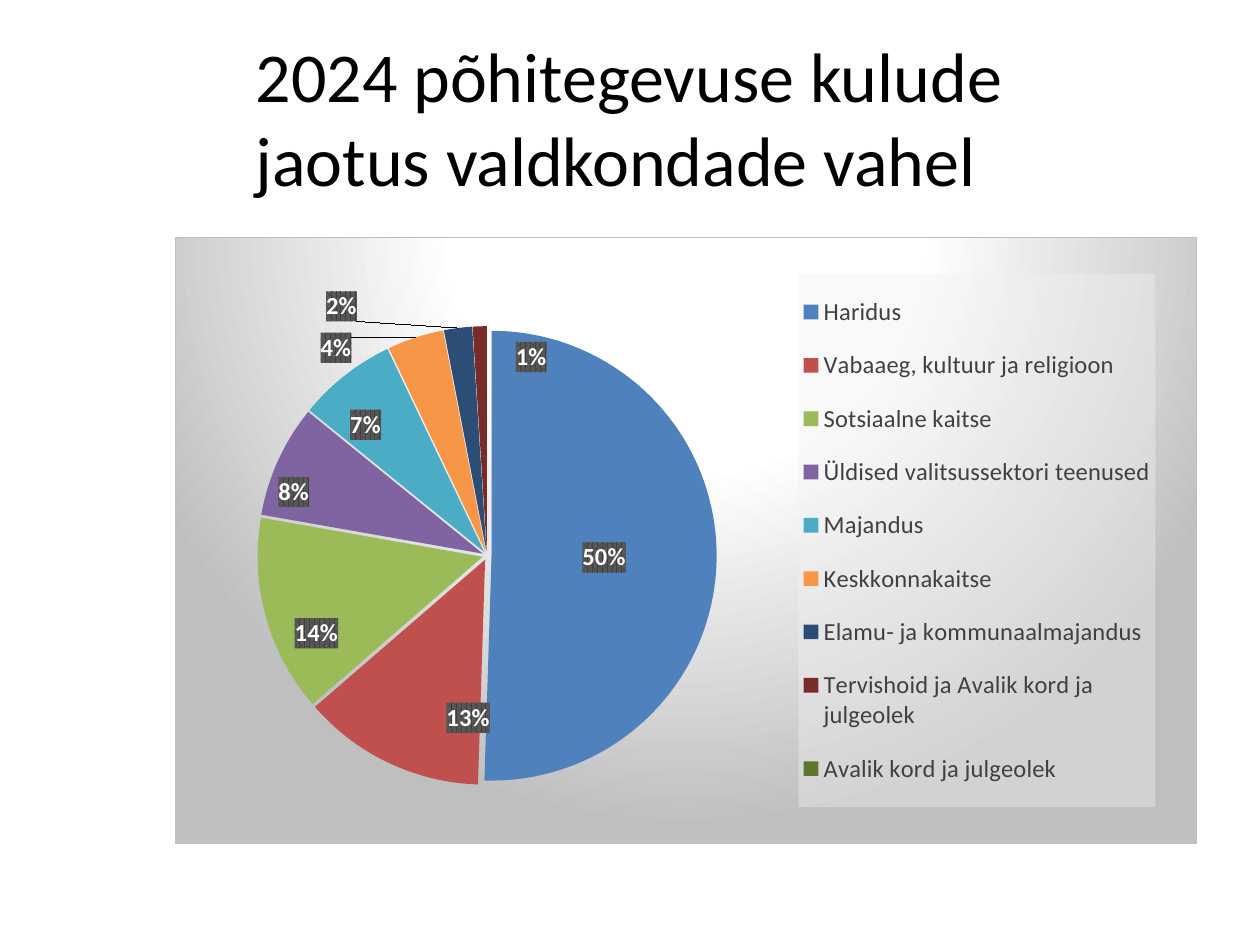
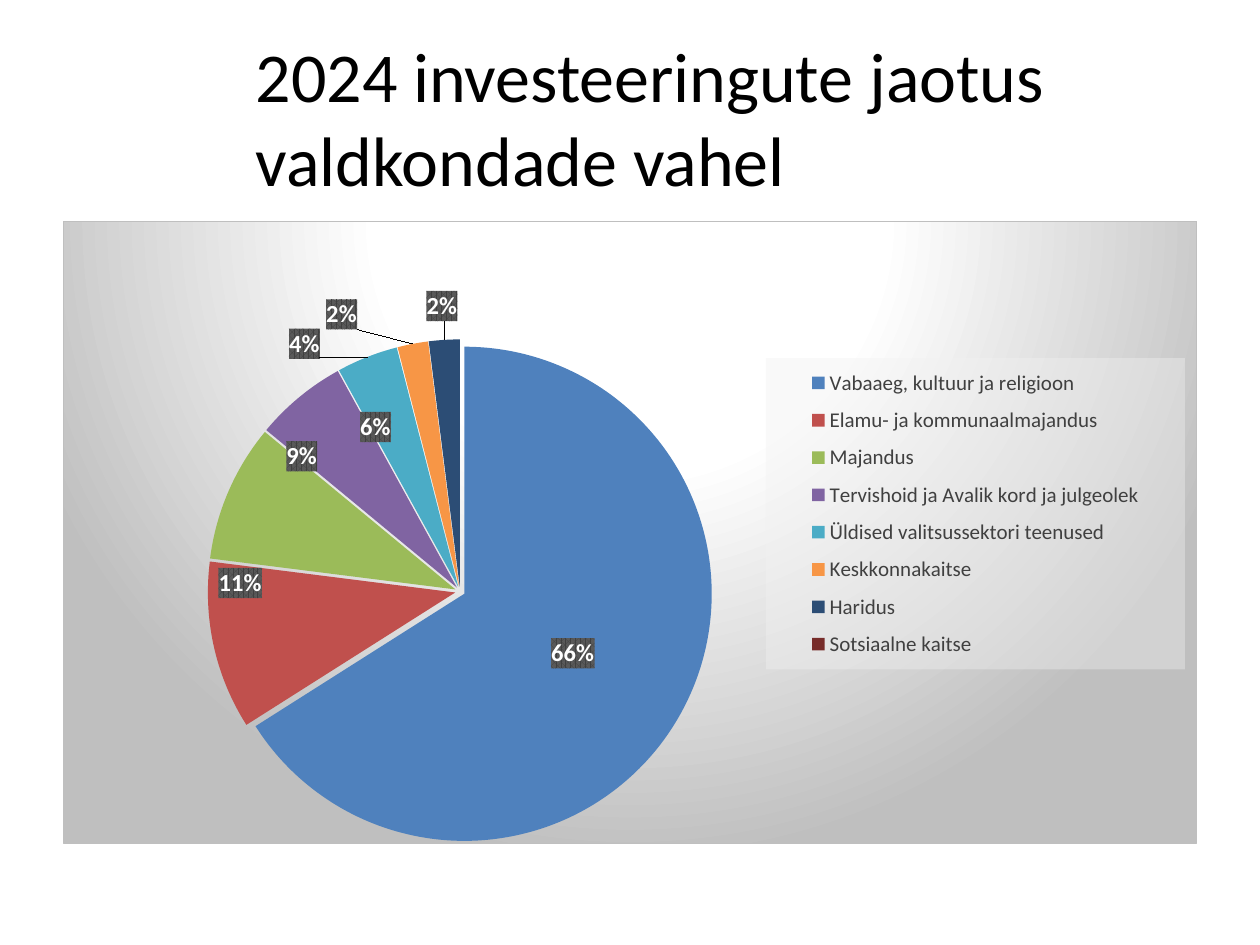
import copy
from dataclasses import dataclass

import pptx
import pptx.chart.chart
import pptx.chart.data
import pptx.chart.series
import pptx.dml.color
import pptx.enum.chart
import pptx.enum.text
import pptx.oxml
import pptx.oxml.ns
import pptx.presentation
import pptx.util
from pptx.dml.color import RGBColor
from pptx.util import Inches

FONT = "Calibri"
BLACK = RGBColor(0x00, 0x00, 0x00)
WHITE = RGBColor(0xFF, 0xFF, 0xFF)
LEGEND_TEXT = RGBColor(0x40, 0x40, 0x40)
LEGEND_FILL = RGBColor(0xF2, 0xF2, 0xF2)
EDGE_GREY = RGBColor(0xBF, 0xBF, 0xBF)
LABEL_DARK = RGBColor(0x40, 0x40, 0x40)
LABEL_LIGHT = RGBColor(0x59, 0x59, 0x59)
SLICE_COLORS = [
    RGBColor(0x4F, 0x81, 0xBD),
    RGBColor(0xC0, 0x50, 0x4D),
    RGBColor(0x9B, 0xBB, 0x59),
    RGBColor(0x80, 0x64, 0xA2),
    RGBColor(0x4B, 0xAC, 0xC6),
    RGBColor(0xF7, 0x96, 0x46),
    RGBColor(0x2C, 0x4D, 0x75),
    RGBColor(0x77, 0x2C, 0x2A),
    RGBColor(0x5F, 0x75, 0x30),
]
NAMESPACES = pptx.oxml.ns.nsdecls("c", "a")
qn = pptx.oxml.ns.qn


@dataclass
class Box:
    left: float
    top: float
    width: float
    height: float


@dataclass
class Slice:
    """A pie slice; label_shift is in inches from the slice's middle."""

    category: str
    percent: int | None
    label_shift: tuple[float, float] | None = None


@dataclass
class PieSlide:
    """Frame is in inches; plot and legend are fractions of the frame."""

    title: str
    frame: Box
    plot: Box
    legend: Box
    font_size: int
    legend_size: int
    slices: list[Slice]


PIE_SLIDES = [
    PieSlide(
        "2024 põhitegevuse kulude jaotus valdkondade vahel",
        frame=Box(1.39, 1.88, 8.11, 4.82),
        plot=Box(0.08, 0.09, 0.45, 0.87),
        legend=Box(0.61, 0.06, 0.35, 0.88),
        font_size=14,
        legend_size=14,
        slices=[
            Slice("Haridus", 50),
            Slice("Vabaaeg, kultuur ja religioon", 13, (0.25, 0.45)),
            Slice("Sotsiaalne kaitse", 14, (-0.46, 0.37)),
            Slice("Üldised valitsussektori teenused", 8, (-0.69, -0.12)),
            Slice("Majandus", 7, (-0.39, -0.31)),
            Slice("Keskkonnakaitse", 4, (-0.91, -0.77)),
            Slice("Elamu- ja kommunaalmajandus", 2, (-1.04, -1.06)),
            Slice("Tervishoid ja Avalik kord ja julgeolek", 1, (0.38, -0.65)),
            Slice("Avalik kord ja julgeolek", None),
        ],
    ),
    PieSlide(
        "2024 investeeringute jaotus valdkondade vahel",
        frame=Box(0.5, 1.75, 9, 4.95),
        plot=Box(0.1, 0.22, 0.5, 0.81),
        legend=Box(0.62, 0.22, 0.37, 0.5),
        font_size=10,
        legend_size=12,
        slices=[
            Slice("Vabaaeg, kultuur ja religioon", 66),
            Slice("Elamu- ja kommunaalmajandus", 11, (-0.75, -0.29)),
            Slice("Majandus", 9, (-0.32, -0.67)),
            Slice("Tervishoid ja Avalik kord ja julgeolek", 6, (-0.02, -0.52)),
            Slice("Üldised valitsussektori teenused", 4, (-0.86, -1.02)),
            Slice("Keskkonnakaitse", 2, (-0.75, -1.2)),
            Slice("Haridus", 2, (-0.08, -1.25)),
            Slice("Sotsiaalne kaitse", None),
        ],
    ),
]


def style_font(font, size: int, color: RGBColor, bold: bool = False) -> None:
    font.name = FONT
    font.size = pptx.util.Pt(size)
    font.bold = bold
    font.color.rgb = color


def chart_xml(tag: str, content: str = "", attributes: str = ""):
    return pptx.oxml.parse_xml(f"<c:{tag} {NAMESPACES} {attributes}>{content}</c:{tag}>")


def solid(color: RGBColor, extra: str = "") -> str:
    return f'<a:solidFill><a:srgbClr val="{color}">{extra}</a:srgbClr></a:solidFill>'


def layout_xml(box: Box, target: str = ""):
    return chart_xml(
        "layout",
        f'<c:manualLayout>{target}<c:xMode val="edge"/><c:yMode val="edge"/>'
        f'<c:x val="{box.left}"/><c:y val="{box.top}"/>'
        f'<c:w val="{box.width}"/><c:h val="{box.height}"/></c:manualLayout>',
    )


def replace_layout(parent, layout, position: int) -> None:
    for old_layout in parent.findall(qn("c:layout")):
        parent.remove(old_layout)
    parent.insert(position, layout)


def style_background(chart: pptx.chart.chart.Chart) -> None:
    stops = "".join(
        f'<a:gs pos="{position * 1000}"><a:srgbClr val="{color}"/></a:gs>'
        for position, color in [(0, WHITE), (39, WHITE), (100, EDGE_GREY)]
    )
    background = chart_xml(
        "spPr",
        f'<a:gradFill><a:gsLst>{stops}</a:gsLst><a:path path="circle">'
        '<a:fillToRect l="50000" t="-80000" r="50000" b="180000"/></a:path></a:gradFill>'
        f'<a:ln w="9525">{solid(EDGE_GREY)}</a:ln>',
    )
    chart_space = chart.element
    chart_space.find(qn("c:chart")).addnext(background)


def style_legend(chart: pptx.chart.chart.Chart, pie: PieSlide) -> None:
    chart.has_legend = True
    legend = chart.legend
    legend.position = pptx.enum.chart.XL_LEGEND_POSITION.RIGHT
    legend.include_in_layout = False
    style_font(legend.font, pie.legend_size, LEGEND_TEXT)
    element = chart.element.find(".//" + qn("c:legend"))
    replace_layout(element, layout_xml(pie.legend), 1)
    fill = chart_xml("spPr", solid(LEGEND_FILL, '<a:alpha val="39000"/>'))
    element.find(qn("c:overlay")).addnext(fill)


def add_slice_labels(series: pptx.chart.series.PieSeries, pie: PieSlide) -> None:
    labels = series.data_labels
    labels.show_value = True
    labels.number_format = '0"%"'
    labels.number_format_is_linked = False
    labels.position = pptx.enum.chart.XL_LABEL_POSITION.CENTER
    style_font(labels.font, 14, WHITE, bold=True)
    element = series._element.find(qn("c:dLbls"))
    element.find(qn("c:numFmt")).addnext(
        chart_xml(
            "spPr",
            f'<a:pattFill prst="pct75"><a:fgClr><a:srgbClr val="{LABEL_DARK}"/></a:fgClr>'
            f'<a:bgClr><a:srgbClr val="{LABEL_LIGHT}"/></a:bgClr></a:pattFill>',
        )
    )
    shared = [child for child in element if child.tag != qn("c:showLeaderLines")]
    for index, pie_slice in enumerate(pie.slices):
        if pie_slice.label_shift is None:
            continue
        shift_x, shift_y = pie_slice.label_shift
        label = chart_xml(
            "dLbl",
            f'<c:idx val="{index}"/><c:layout><c:manualLayout>'
            f'<c:x val="{shift_x / pie.frame.width:.4f}"/>'
            f'<c:y val="{shift_y / pie.frame.height:.4f}"/>'
            "</c:manualLayout></c:layout>",
        )
        label.extend(copy.deepcopy(shared))
        label.find(qn("c:numFmt")).set("formatCode", "0%")
        label.find(qn("c:showVal")).set("val", "0")
        label.find(qn("c:showPercent")).set("val", "1")
        shared[0].addprevious(label)


def add_pie(slide, pie: PieSlide) -> None:
    data = pptx.chart.data.CategoryChartData()
    data.categories = [pie_slice.category for pie_slice in pie.slices]
    data.add_series("Series 1", [pie_slice.percent for pie_slice in pie.slices])
    frame = pie.frame
    chart = slide.shapes.add_chart(
        pptx.enum.chart.XL_CHART_TYPE.PIE,
        Inches(frame.left),
        Inches(frame.top),
        Inches(frame.width),
        Inches(frame.height),
        data,
    ).chart
    chart.has_title = False
    style_font(chart.font, pie.font_size, BLACK)
    style_background(chart)
    plot_area = chart.element.find(".//" + qn("c:plotArea"))
    replace_layout(plot_area, layout_xml(pie.plot, '<c:layoutTarget val="inner"/>'), 0)
    style_legend(chart, pie)

    plot = chart.plots[0]
    plot.vary_by_categories = True
    series = plot.series[0]
    for index, color in enumerate(SLICE_COLORS[: len(pie.slices)]):
        fill = series.points[index].format.fill
        fill.solid()
        fill.fore_color.rgb = color
    explosion = chart_xml("explosion", attributes='val="2"')
    series._element.find(qn("c:dPt")).addprevious(explosion)
    add_slice_labels(series, pie)


def add_pie_slide(presentation: pptx.presentation.Presentation, pie: PieSlide) -> None:
    slide = presentation.slides.add_slide(presentation.slide_layouts[5])
    title = slide.shapes.title
    title.left, title.top = Inches(1.93), Inches(0.3)
    title.width, title.height = Inches(7.57), Inches(1.25)
    title.text_frame.text = pie.title
    title.text_frame.vertical_anchor = pptx.enum.text.MSO_ANCHOR.MIDDLE
    paragraph = title.text_frame.paragraphs[0]
    paragraph.alignment = pptx.enum.text.PP_ALIGN.LEFT
    style_font(paragraph.font, 40, BLACK)
    add_pie(slide, pie)


def main() -> None:
    presentation = pptx.Presentation()
    presentation.slide_width = Inches(10)
    presentation.slide_height = Inches(7.5)
    for pie in PIE_SLIDES:
        add_pie_slide(presentation, pie)
    presentation.save("out.pptx")


if __name__ == "__main__":
    main()
